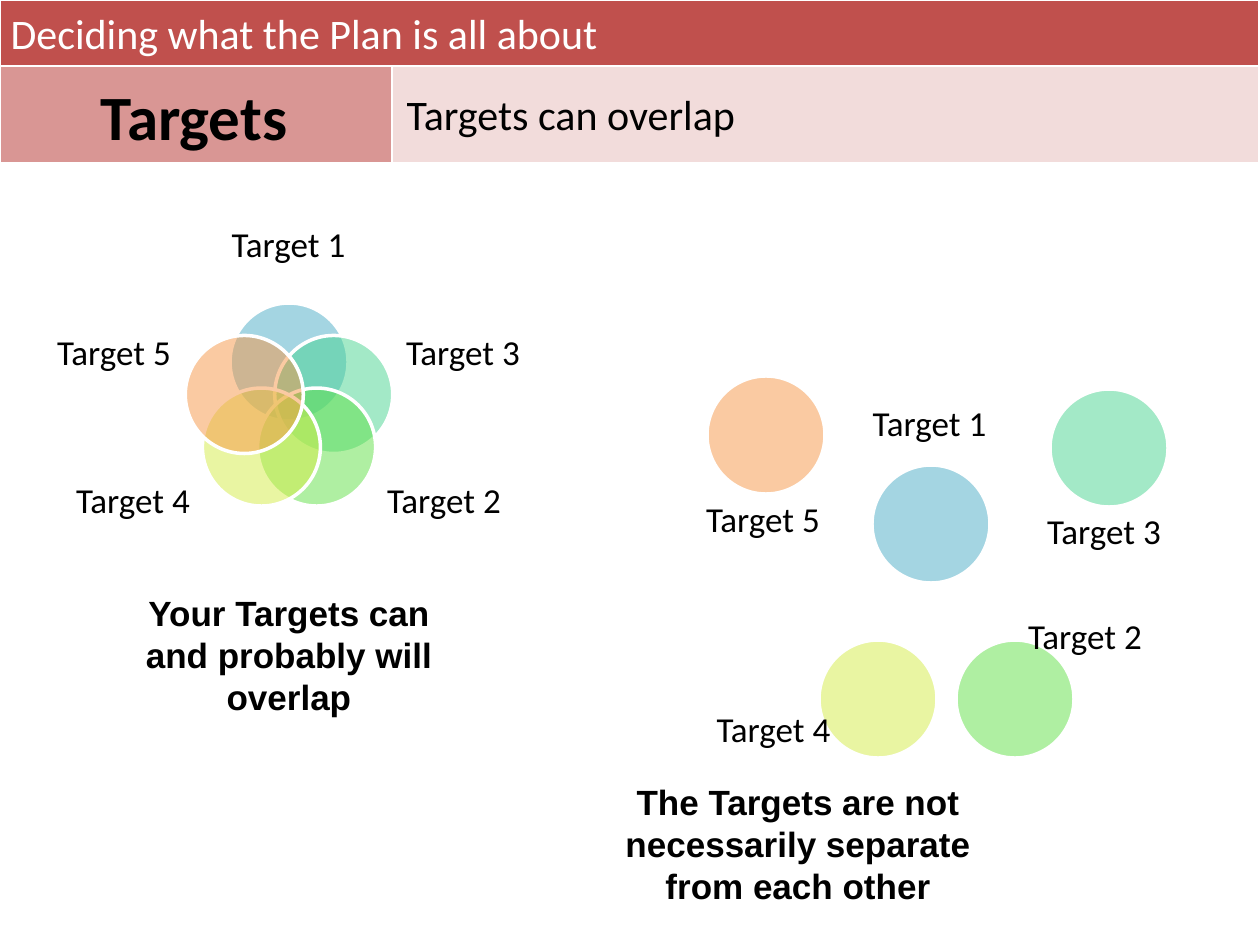
from math import cos, radians, sin

from lxml.etree import SubElement
from pptx import Presentation
from pptx.dml.color import RGBColor
from pptx.enum.shapes import MSO_SHAPE
from pptx.enum.text import MSO_ANCHOR, MSO_AUTO_SIZE, PP_ALIGN
from pptx.oxml import parse_xml
from pptx.oxml.ns import nsdecls, qn
from pptx.util import Pt

PX = 914400 / 126
DIAMETER = 118


def px(*lengths):
    return [round(n * PX) for n in lengths]


def rgb(color):
    return RGBColor.from_string(color)


prs = Presentation()
prs.slide_width, prs.slide_height = px(1260, 945)
s = prs.slides.add_slide(prs.slide_layouts[4])

# Header placeholders: index, box, wording, size, bold, alignment, colour
headers = [
    (0, (-2, 0, 1258, 65), "Deciding what the Plan is all about", 24, False, PP_ALIGN.LEFT, "FFFFFF"),
    (1, (0, 70, 388, 90), "Targets", 36, True, PP_ALIGN.CENTER, "000000"),
    (3, (394, 82, 860, 64), "Targets can overlap", 24, False, PP_ALIGN.LEFT, "000000"),
]
for idx, box, wording, size, bold, align, color in headers:
    sp = s.placeholders[idx]
    sp.left, sp.top, sp.width, sp.height = px(*box)
    tf = sp.text_frame
    tf.text = wording
    tf.auto_size = MSO_AUTO_SIZE.NONE
    tf.vertical_anchor = MSO_ANCHOR.MIDDLE
    p = tf.paragraphs[0]
    p.alignment = align
    p.space_before = Pt(0)
    p.font.name, p.font.size, p.font.bold = "Calibri", Pt(size), bold
    p.font.color.rgb = rgb(color)
for idx in (2, 4):
    empty = s.placeholders[idx].element
    empty.getparent().remove(empty)

# Header band behind the placeholders
frame = s.shapes.add_table(2, 2, *px(0, 0, 1259, 163))
s.shapes.title.element.addprevious(frame.element)
table = frame.table
for col, width in zip(table.columns, px(392, 867)):
    col.width = width
for row, height in zip(table.rows, px(66, 97)):
    row.height = height
table.cell(0, 0).merge(table.cell(0, 1))
fills = ["C0504D", "C0504D", "D99694", "F2DCDB"]
for cell, color in zip(table.iter_cells(), fills):
    tcPr = cell._tc.get_or_add_tcPr()
    for side in ("lnL", "lnR", "lnT", "lnB"):
        tcPr.append(parse_xml(
            f'<a:{side} {nsdecls("a")} w="12700"><a:solidFill>'
            f'<a:srgbClr val="FFFFFF"/></a:solidFill></a:{side}>'))
    cell.fill.solid()
    cell.fill.fore_color.rgb = rgb(color)

# Targets clockwise from the top: name, colour, overlapping label box,
# separate circle centre, separate label box
targets = [
    ("Target 1", "4BACC6", (220, 207, 137, 79), (931, 524), (819, 386, 221, 79)),
    ("Target 3", "48D491", (402, 311, 122, 86), (1109, 448), (1008, 490, 192, 86)),
    ("Target 2", "60E146", (383, 459, 122, 86), (1015, 699), (984, 595, 202, 86)),
    ("Target 4", "D5EC46", (72, 459, 122, 86), (878, 699), (679, 688, 189, 86)),
    ("Target 5", "F79646", (53, 311, 122, 86), (766, 435), (702, 478, 122, 86)),
]
overlapping, separate = [], []
for i, (name, color, near_label, center, far_label) in enumerate(targets):
    angle = radians(72 * i - 90)
    ring = (289 + 47 * cos(angle), 409 + 47 * sin(angle))
    overlapping.append((name, color, ring, near_label))
    separate.append((name, color, center, far_label))

for name, color, (cx, cy), label in overlapping + separate:
    sp = s.shapes.add_shape(MSO_SHAPE.OVAL, *px(
        cx - DIAMETER / 2, cy - DIAMETER / 2, DIAMETER, DIAMETER))
    sp.shadow.inherit = False
    sp.fill.solid()
    sp.fill.fore_color.rgb = rgb(color)
    SubElement(sp.fill._xPr.find(".//" + qn("a:srgbClr")), qn("a:alpha"), val="50000")
    sp.line.color.rgb = rgb("FFFFFF")
    sp.line.width = Pt(2)

    tf = s.shapes.add_textbox(*px(*label)).text_frame
    tf.word_wrap = True
    tf.vertical_anchor = MSO_ANCHOR.MIDDLE
    tf.margin_left = tf.margin_right = tf.margin_top = tf.margin_bottom = 0
    p = tf.paragraphs[0]
    p.text = name
    p.alignment = PP_ALIGN.CENTER
    p.line_spacing = 0.9
    p.font.name, p.font.size = "Calibri", Pt(20)
    p.font.color.rgb = rgb("000000")

captions = [
    (102, 585, "Your Targets can and probably will overlap"),
    (611, 774, "The Targets are not necessarily separate from each other"),
]
for x, y, wording in captions:
    tf = s.shapes.add_textbox(*px(x, y, 374, 140)).text_frame
    tf.word_wrap = True
    p = tf.paragraphs[0]
    p.text = wording
    p.alignment = PP_ALIGN.CENTER
    p.font.name, p.font.size, p.font.bold = "Arial", Pt(20), True
    p.font.color.rgb = rgb("000000")

prs.save("out.pptx")
